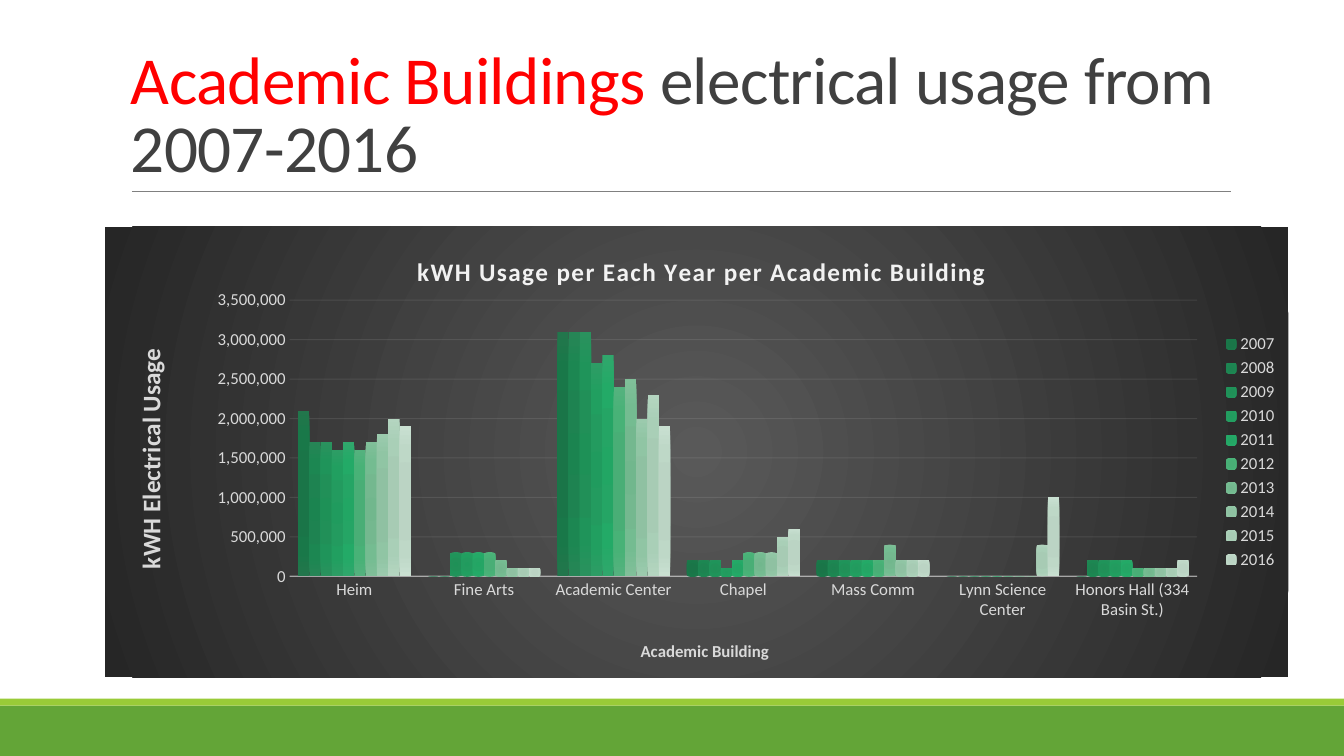
from lxml import etree
from pptx import Presentation
from pptx.chart.data import CategoryChartData
from pptx.dml.color import RGBColor
from pptx.enum.chart import XL_CHART_TYPE, XL_LEGEND_POSITION, XL_TICK_MARK
from pptx.enum.shapes import MSO_CONNECTOR, MSO_SHAPE
from pptx.enum.text import MSO_ANCHOR
from pptx.oxml import parse_xml
from pptx.oxml.ns import nsdecls, qn
from pptx.util import Pt

COLUMN = XL_CHART_TYPE.COLUMN_CLUSTERED
RIGHT = XL_LEGEND_POSITION.RIGHT
NO_TICK = XL_TICK_MARK.NONE
STRAIGHT = MSO_CONNECTOR.STRAIGHT
RECT = MSO_SHAPE.RECTANGLE
BOTTOM = MSO_ANCHOR.BOTTOM

GREEN = RGBColor(0x63, 0xA5, 0x37)
LIME = RGBColor(0x99, 0xCB, 0x38)
GRAY = RGBColor(0x80, 0x80, 0x80)
DARK = RGBColor(0x40, 0x40, 0x40)
RED = RGBColor(0xFF, 0x00, 0x00)
PALE = RGBColor(0xF2, 0xF2, 0xF2)
SILVER = RGBColor(0xD9, 0xD9, 0xD9)
BACK = [(0, RGBColor(0x59, 0x59, 0x59)), (100, RGBColor(0x26, 0x26, 0x26))]

HALLS = ["Heim", "Fine Arts", "Academic Center", "Chapel", "Mass Comm",
         "Lynn Science Center", "Honors Hall (334 Basin St.)"]
UNIT = 100000
USAGE = [
    ("2007", [21, 0, 31, 2, 2, 0, 0], "187547 1A7548 197849 22764C"),
    ("2008", [17, 0, 31, 2, 2, 0, 2], "1B8450 1E8351 1C8752 268556"),
    ("2009", [17, 3, 31, 2, 2, 0, 2], "1E9157 219058 1F945A 2A925E"),
    ("2010", [16, 3, 27, 1, 2, 0, 2], "209B5E 239B5F 219F60 2D9D65"),
    ("2011", [17, 3, 28, 2, 2, 0, 2], "22A664 25A565 23AA67 30A76C"),
    ("2012", [16, 3, 24, 3, 2, 0, 1], "46AE74 49AE76 48B277 54B27E"),
    ("2013", [17, 2, 25, 3, 4, 0, 1], "71B78D 74B88F 74BC91 80BF99"),
    ("2014", [18, 1, 20, 3, 2, 0, 1], "8DC0A0 8FC1A2 90C5A4 9BCAAD"),
    ("2015", [20, 1, 23, 5, 2, 4, 1], "A5C9B2 A7CBB4 A9CFB7 B4D5C0"),
    ("2016", [19, 1, 19, 6, 2, 10, 2], "B9D2C2 BBD4C4 BED8C7 C9E0D1"),
]
STOPS = (0, 34, 70, 100)


def write(para, text, font="Calibri", size=12, color=DARK, bold=False, space=0):
    run = para.add_run()
    run.text = text
    run.font.name = font
    run.font.size = Pt(size)
    run.font.bold = bold
    run.font.color.rgb = color
    if space:
        run.font._element.set("spc", str(round(space * 100)))


def radial(stops, edge):
    marks = "".join(
        f'<a:gs pos="{pos * 1000}"><a:srgbClr val="{color}"/></a:gs>'
        for pos, color in stops)
    box = " ".join(f'{side}="{edge * 1000}"' for side in "ltrb")
    return parse_xml(
        f'<a:gradFill {nsdecls("a")} rotWithShape="1"><a:gsLst>{marks}</a:gsLst>'
        f'<a:path path="circle"><a:fillToRect {box}/></a:path></a:gradFill>')


def place(part, inner=False, **spots):
    old = part.find(qn("c:layout"))
    if old is None:
        old = etree.Element(qn("c:layout"))
        part.insert(0, old)
    frame = etree.SubElement(old, qn("c:manualLayout"))
    if inner:
        etree.SubElement(frame, qn("c:layoutTarget")).set("val", "inner")
    for key in ("xMode", "yMode"):
        etree.SubElement(frame, qn("c:" + key)).set("val", "edge")
    for key, val in spots.items():
        etree.SubElement(frame, qn("c:" + key)).set("val", str(val))


def fade(part, share):
    for color in part.iter(qn("a:srgbClr")):
        etree.SubElement(color, qn("a:alpha")).set("val", str(share * 1000))


class Board:
    def __init__(self, slide, font="Calibri"):
        self.slide = slide
        self.font = font

    def band(self, x, y, w, h, color):
        bar = self.slide.shapes.add_shape(RECT, Pt(x), Pt(y), Pt(w), Pt(h))
        bar.shadow.inherit = False
        bar.fill.solid()
        bar.fill.fore_color.rgb = color
        bar.line.fill.background()

    def rule(self, x, y, end, color):
        line = self.slide.shapes.add_connector(STRAIGHT, Pt(x), Pt(y), Pt(end), Pt(y))
        line.line.color.rgb = color
        line.line.width = Pt(0.5)
        etree.SubElement(line.element.spPr, qn("a:effectLst"))

    def head(self, x, y, w, h, runs):
        frame = self.slide.shapes.add_textbox(Pt(x), Pt(y), Pt(w), Pt(h)).text_frame
        frame.word_wrap = True
        frame.vertical_anchor = BOTTOM
        para = frame.paragraphs[0]
        para.line_spacing = 0.85
        for text, color in runs:
            write(para, text, font=self.font, size=48, color=color, space=-0.5)

    def label(self, owner, text, **style):
        write(owner.text_frame.paragraphs[0], text, font=self.font, bold=True, **style)

    def style(self, font):
        font.name = self.font
        font.size = Pt(12)
        font.color.rgb = SILVER

    def chart(self, x, y, w, h):
        data = CategoryChartData(number_format="#,##0")
        data.categories = HALLS
        for year, vals, _ in USAGE:
            data.add_series(year, [val * UNIT for val in vals])
        chart = self.slide.shapes.add_chart(
            COLUMN, Pt(x), Pt(y), Pt(w), Pt(h), data).chart
        root = chart.element
        self.style(chart.font)

        plot = chart.plots[0]
        plot.gap_width = 150
        plot.overlap = 0
        plot.vary_by_categories = False
        for bars, node, (_, _, tones) in zip(plot.series, root.iter(qn("c:ser")), USAGE):
            bars.format.fill.background()
            blank = node.find(qn("c:spPr")).find(qn("a:noFill"))
            blank.getparent().replace(blank, radial(zip(STOPS, tones.split()), 100))

        chart.has_legend = True
        chart.legend.position = RIGHT
        chart.legend.include_in_layout = False
        self.style(chart.legend.font)

        cat, val = chart.category_axis, chart.value_axis
        for axis in (cat, val):
            axis.major_tick_mark = axis.minor_tick_mark = NO_TICK
            self.style(axis.tick_labels.font)
        cat.format.line.color.rgb = PALE
        cat.format.line.width = Pt(1)
        val.format.line.fill.background()
        val.minimum_scale, val.maximum_scale, val.major_unit = 0, 3500000, 500000
        val.tick_labels.number_format = "#,##0"
        val.tick_labels.number_format_is_linked = False
        val.has_major_gridlines = True
        grid = val.major_gridlines.format.line
        grid.color.rgb = PALE
        grid.width = Pt(0.75)

        chart.has_title = True
        self.label(chart.chart_title, "kWH Usage per Each Year per Academic Building",
                   size=18, color=PALE, space=1)
        chart.chart_title.include_in_layout = False
        self.label(cat.axis_title, "Academic Building", color=SILVER)
        self.label(val.axis_title, "kWH Electrical Usage", size=18, color=SILVER)

        body = root.find(qn("c:chart"))
        area = body.find(qn("c:plotArea"))
        across, up = area.find(qn("c:catAx")), area.find(qn("c:valAx"))
        fade(across.find(qn("c:spPr")), 54)
        fade(up.find(qn("c:majorGridlines")), 10)
        turn = next(up.find(qn("c:title")).iter(qn("a:bodyPr")))
        turn.set("rot", "-5400000")
        turn.set("vert", "horz")
        place(body.find(qn("c:title")), x=0.26, y=0.05)
        place(across.find(qn("c:title")), x=0.45, y=0.91)
        place(up.find(qn("c:title")), x=0.02, y=0.26)
        place(area, inner=True, x=0.156, y=0.163, w=0.767, h=0.613)
        paint = etree.Element(qn("c:spPr"))
        paint.append(radial(BACK, 50))
        etree.SubElement(etree.SubElement(paint, qn("a:ln")), qn("a:noFill"))
        body.addnext(paint)


def main():
    deck = Presentation()
    deck.slide_width, deck.slide_height = Pt(960), Pt(540)
    board = Board(deck.slides.add_slide(deck.slide_layouts[6]))
    board.band(0, 504, 960, 36, GREEN)
    board.band(0, 499, 960, 5, LIME)
    board.rule(94.3, 136.8, 879, GRAY)
    board.head(86.4, 22.3, 792, 114.5, [
        ("Academic Buildings ", RED), ("electrical usage from 2007-2016", DARK)])
    board.chart(75, 162, 845.3, 321.8)
    deck.save("out.pptx")


if __name__ == "__main__":
    main()
